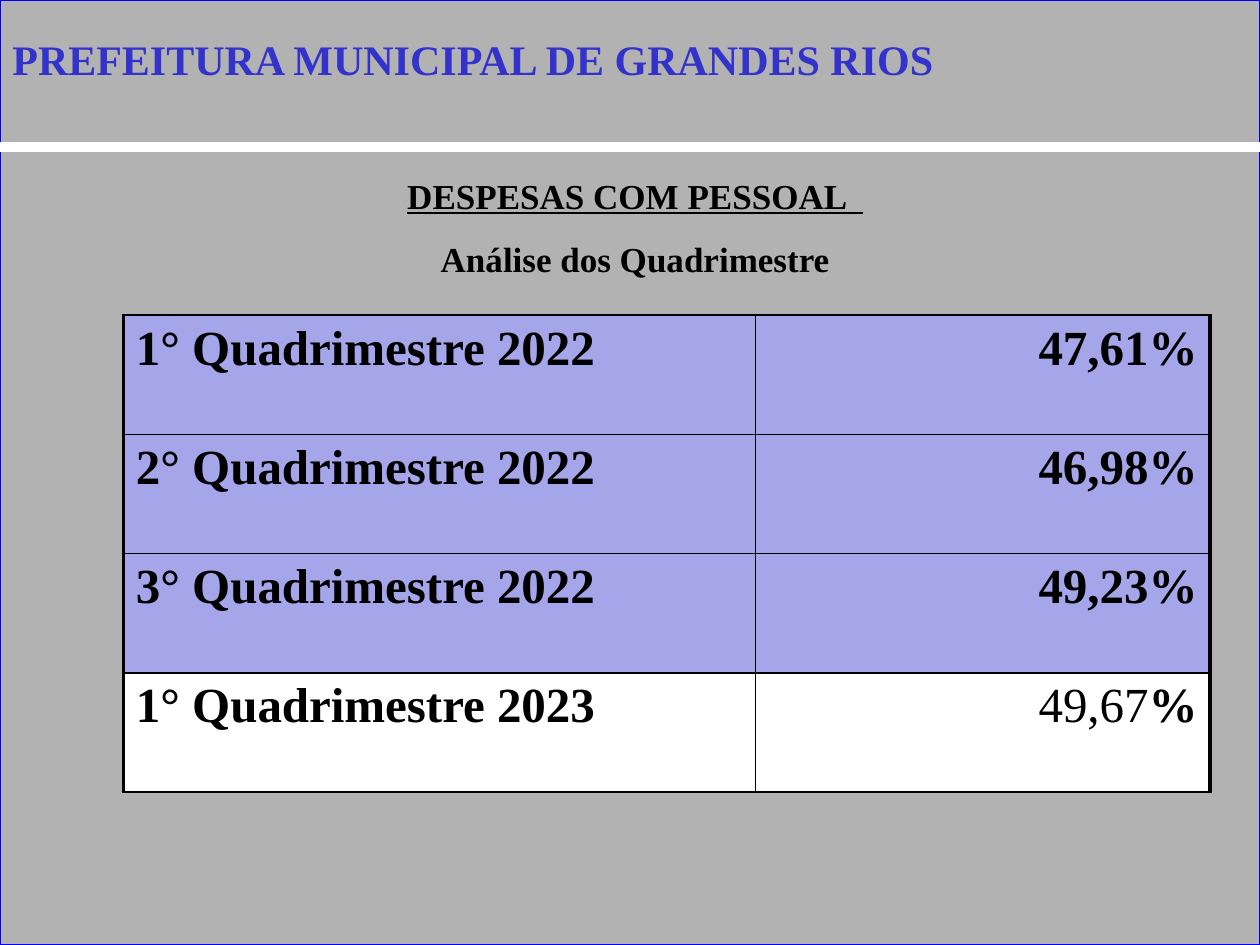
"""Build the slide on personnel spending by four-month period."""
from lxml import etree
from pptx import Presentation
from pptx.dml.color import RGBColor
from pptx.enum import shapes, text
from pptx.oxml import ns
from pptx.util import Pt

TITLE = "PREFEITURA MUNICIPAL DE GRANDES RIOS"
HEADINGS = [("DESPESAS COM PESSOAL  ", True), ("Análise dos Quadrimestre", False)]
ROWS = [
    ("1° Quadrimestre 2022", [("47,61%", True)], "past"),
    ("2° Quadrimestre 2022", [("46,98%", True)], "past"),
    ("3° Quadrimestre 2022", [("49,23%", True)], "past"),
    ("1° Quadrimestre 2023", [("49,67", False), ("%", True)], "current"),
]
THEME = {
    "font": "Times New Roman", "title_size": 24, "heading_size": 20, "table_size": 28,
    "title": "3333CC", "shadow": "808080", "text": "000000", "frame": "0000FF",
    "background": "B2B2B2", "rule": "FFFFFF", "past": "A5A5E9", "current": "FFFFFF",
}
PAGE_WIDTH, PAGE_HEIGHT = 720, 540
RULE_Y = 84
TABLE_LEFT, TABLE_TOP, ROW_HEIGHT = 70.5, 180, 68.2
COLUMN_WIDTHS = [361.2, 259.8]
THICK, THIN = 2.25, 1


def color(name):
    return RGBColor.from_string(THEME[name])


def style(para, size, tint="text"):
    font = para.font
    font.name, font.size, font.bold = THEME["font"], Pt(THEME[size]), True
    font.color.rgb = color(tint)


def add_text_box(page, left, top, width, height):
    frame = page.shapes.add_textbox(Pt(left), Pt(top), Pt(width), Pt(height)).text_frame
    frame.word_wrap = True
    frame.auto_size = text.MSO_AUTO_SIZE.SHAPE_TO_FIT_TEXT
    return frame


def add_backdrop(page):
    panel = page.shapes.add_shape(
        shapes.MSO_SHAPE.RECTANGLE, 0, 0, Pt(PAGE_WIDTH), Pt(PAGE_HEIGHT))
    panel.shadow.inherit = False
    panel.fill.solid()
    panel.fill.fore_color.rgb = color("background")
    panel.line.color.rgb = color("frame")
    panel.line.width = Pt(0.75)
    rule = page.shapes.add_connector(
        shapes.MSO_CONNECTOR.STRAIGHT, 0, Pt(RULE_Y), Pt(PAGE_WIDTH), Pt(RULE_Y))
    rule.line.color.rgb = color("rule")
    rule.line.width = Pt(6)
    etree.SubElement(rule._element.spPr, ns.qn("a:effectLst"))


def add_title(page):
    para = add_text_box(page, 0, 15.5, 683, 36).paragraphs[0]
    style(para, "title_size", "title")
    span = para.add_run()
    span.text = TITLE
    effects = etree.SubElement(span._r.get_or_add_rPr(), ns.qn("a:effectLst"))
    shadow = etree.SubElement(effects, ns.qn("a:outerShdw"), dist="28398", dir="2700000")
    etree.SubElement(shadow, ns.qn("a:srgbClr"), val=THEME["shadow"])


def add_headings(page):
    frame = add_text_box(page, 42, RULE_Y, 642, 368)
    for index, (heading, underlined) in enumerate(HEADINGS):
        para = frame.add_paragraph() if index else frame.paragraphs[0]
        para.alignment, para.line_spacing = text.PP_ALIGN.CENTER, 1.5
        style(para, "heading_size")
        span = para.add_run()
        span.text = heading
        span.font.underline = underlined


def add_borders(cell, left, right):
    properties = cell._tc.get_or_add_tcPr()
    widths = {"lnL": left, "lnR": right, "lnT": THIN, "lnB": THIN}
    for position, (side, width) in enumerate(widths.items()):
        line = etree.Element(ns.qn(f"a:{side}"), w=str(Pt(width)))
        fill = etree.SubElement(line, ns.qn("a:solidFill"))
        etree.SubElement(fill, ns.qn("a:srgbClr"), val=THEME["text"])
        properties.insert(position, line)


def add_spending_table(page):
    table = page.shapes.add_table(
        len(ROWS), len(COLUMN_WIDTHS), Pt(TABLE_LEFT), Pt(TABLE_TOP),
        Pt(sum(COLUMN_WIDTHS)), Pt(ROW_HEIGHT * len(ROWS))).table
    for column, width in zip(table.columns, COLUMN_WIDTHS):
        column.width = Pt(width)
    for row, (period, share, tint) in zip(table.rows, ROWS):
        row.height = Pt(ROW_HEIGHT)
        columns = [
            ([(period, True)], text.PP_ALIGN.LEFT, THICK, THIN),
            (share, text.PP_ALIGN.RIGHT, THIN, THICK),
        ]
        for cell, (spans, alignment, left, right) in zip(row.cells, columns):
            cell.fill.solid()
            cell.fill.fore_color.rgb = color(tint)
            add_borders(cell, left, right)
            para = cell.text_frame.paragraphs[0]
            para.alignment = alignment
            style(para, "table_size")
            for words, bold in spans:
                span = para.add_run()
                span.text, span.font.bold = words, bold


def main():
    deck = Presentation()
    deck.slide_width, deck.slide_height = Pt(PAGE_WIDTH), Pt(PAGE_HEIGHT)
    page = deck.slides.add_slide(deck.slide_layouts[6])
    add_backdrop(page)
    add_headings(page)
    add_spending_table(page)
    add_title(page)
    deck.save("out.pptx")


if __name__ == "__main__":
    main()
